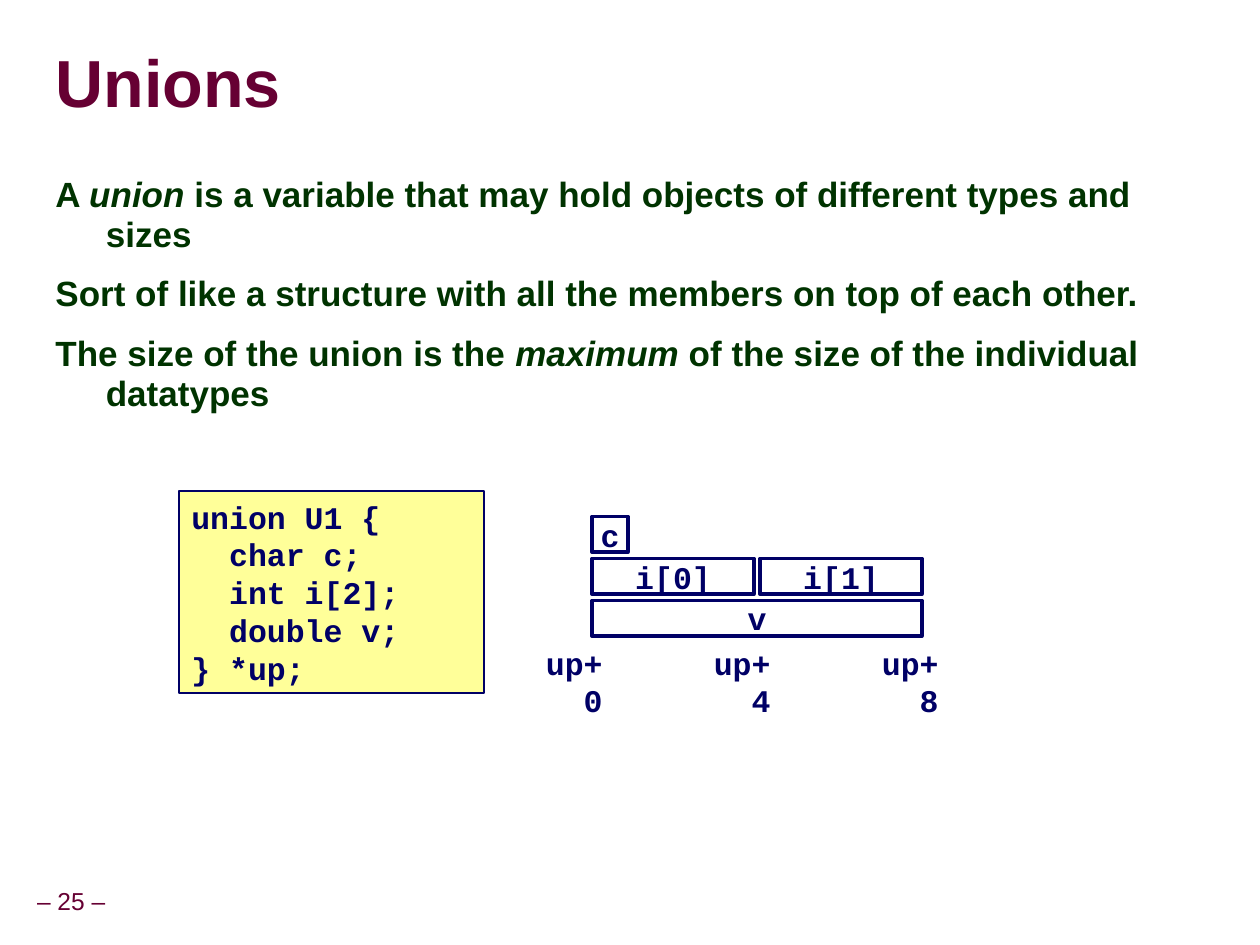
"""Build a slide on C unions with a code box and a memory layout diagram."""
from pptx import Presentation
from pptx import util as u
from pptx.dml.color import RGBColor
from pptx.enum import shapes, text
from pptx.oxml.ns import qn
from lxml import etree

COLORS = {"maroon": "660033", "green": "003300", "navy": "000066",
          "yellow": "FFFF99", "white": "FFFFFF"}

prs = Presentation()
prs.slide_width, prs.slide_height = u.Inches(10), u.Inches(7.5)
COL, ROW = prs.slide_width / 100, prs.slide_height / 75
BYTE, GAP = 10 / 3, 0.5
LEFT, TOP = 47, 41


def box(shape_tree, x, y, w, h, fill=None, line=1):
    area = int(x * COL), int(y * ROW), int(w * COL), int(h * ROW)
    if fill is None:
        return shape_tree.add_textbox(*area)
    sp = shape_tree.add_shape(shapes.MSO_SHAPE.RECTANGLE, *area)
    sp.shadow.inherit = False
    sp.fill.solid()
    sp.fill.fore_color.rgb = RGBColor.from_string(COLORS[fill])
    sp.line.color.rgb = RGBColor.from_string(COLORS["navy"])
    sp.line.width = u.Pt(line)
    return sp


def write(p, content, size=18, color="navy", font="Courier New", bold=True,
          italic=False, align=text.PP_ALIGN.LEFT):
    p.alignment = align
    r = p.add_run()
    r.text = content
    r.font.name, r.font.size = font, u.Pt(size)
    r.font.bold, r.font.italic = bold, italic
    r.font.color.rgb = RGBColor.from_string(COLORS[color])


s = prs.slides.add_slide(prs.slide_layouts[1])

title, body = s.shapes.title, s.placeholders[1]
for sp, (x, y, w, h) in ((title, (4.4, 2.7, 95.1, 8.3)),
                         (body, (3.2, 13.4, 90.6, 56.9))):
    sp.left, sp.top = int(x * COL), int(y * ROW)
    sp.width, sp.height = int(w * COL), int(h * ROW)
    sp.text_frame.auto_size = text.MSO_AUTO_SIZE.NONE

tf = title.text_frame
tf.margin_left = tf.margin_right = tf.margin_top = tf.margin_bottom = 0
tf.vertical_anchor = text.MSO_ANCHOR.MIDDLE
tf.paragraphs[0].line_spacing = 0.87
write(tf.paragraphs[0], "Unions", 38, "maroon", "Arial")

points = [
    [("A ", False), ("union", True),
     (" is a variable that may hold objects of different types and sizes", False)],
    [("Sort of like a structure with all the members on top of each other.", False)],
    [("The size of the union is the ", False), ("maximum", True),
     (" of the size of the individual datatypes", False)],
]
tf = body.text_frame
for i, runs in enumerate(points):
    p = tf.add_paragraph() if i else tf.paragraphs[0]
    p.line_spacing, p.space_before = 0.95, u.Pt(11.2)
    for content, italic in runs:
        write(p, content, 20, "green", "Arial", italic=italic)
    pPr = p._p.get_or_add_pPr()
    pPr.set("marL", str(u.Inches(0.42)))
    pPr.set("indent", str(u.Inches(-0.4)))
    etree.SubElement(pPr, qn("a:buNone"))

code = ["union U1 {", "  char c;", "  int i[2];", "  double v;", "} *up;"]
tf = box(s.shapes, 14.2, 39, 24.2, 16, "yellow").text_frame
tf.word_wrap = True
tf.vertical_anchor = text.MSO_ANCHOR.TOP
for i, content in enumerate(code):
    write(tf.add_paragraph() if i else tf.paragraphs[0], content)

layout = s.shapes.add_group_shape()
for name, row, start, size in (("c", 0, 0, 1), ("i[0]", 1, 0, 4),
                               ("i[1]", 1, 4, 4), ("v", 2, 0, 8)):
    sp = box(layout.shapes, LEFT + start * BYTE, TOP + row * BYTE,
             size * BYTE - GAP, BYTE - GAP, "white", 2)
    tf = sp.text_frame
    tf.word_wrap = False
    tf.vertical_anchor = text.MSO_ANCHOR.MIDDLE
    write(tf.paragraphs[0], name, align=text.PP_ALIGN.CENTER)

for offset in (0, 4, 8):
    tf = box(layout.shapes, LEFT - 6.1 + offset * BYTE, 50.6, 7.9, 4).text_frame
    tf.word_wrap = True
    write(tf.paragraphs[0], f"up+{offset}", align=text.PP_ALIGN.RIGHT)

tf = box(s.shapes, -0.9, 69.9, 13.1, 3.4).text_frame
tf.margin_left = tf.margin_right = u.Inches(0.05)
tf.word_wrap = False
tf.vertical_anchor = text.MSO_ANCHOR.MIDDLE
tf.paragraphs[0].line_spacing = 0.9
write(tf.paragraphs[0], "– 25 –", 14, "maroon", "Arial", False,
      align=text.PP_ALIGN.CENTER)

prs.save("out.pptx")
